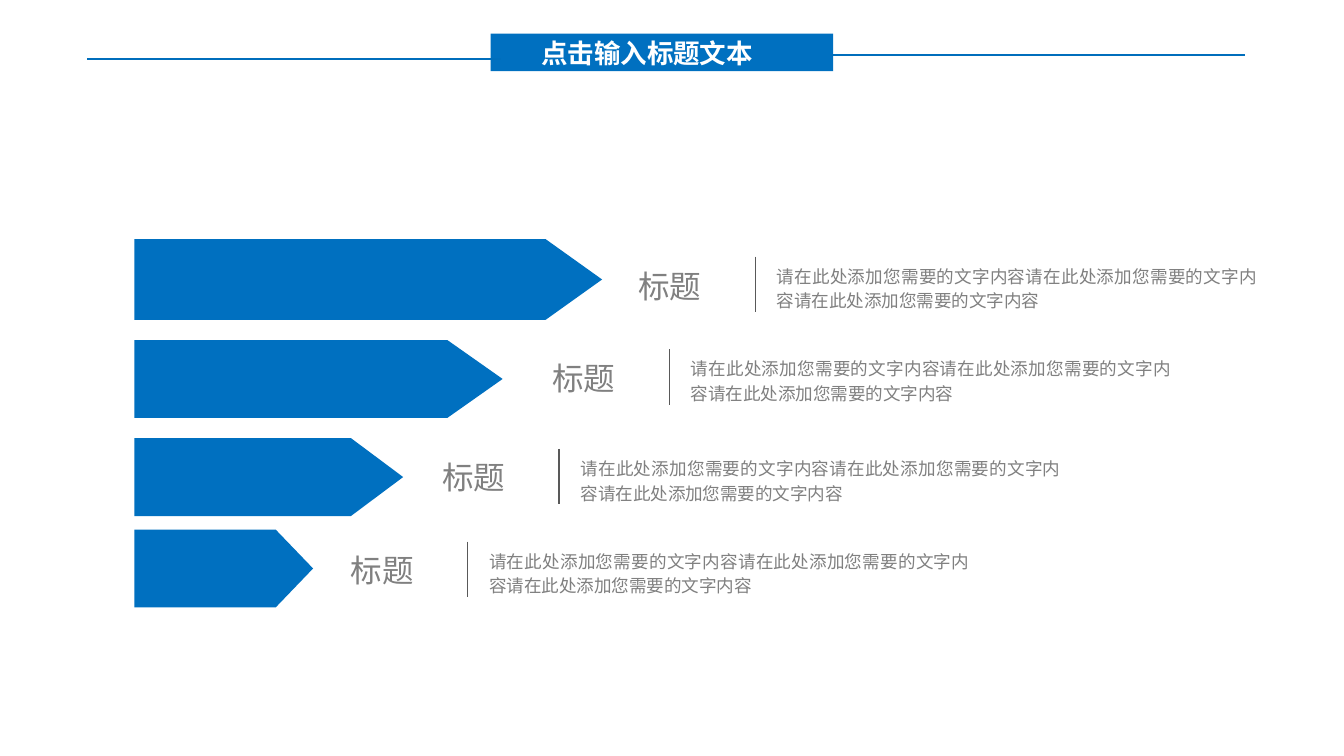
import pptx
import pptx.util
import pptx.dml.color
import pptx.enum.shapes
import pptx.enum.text
import pptx.oxml.ns
import lxml.etree

Inches, Pt = pptx.util.Inches, pptx.util.Pt
KIND = pptx.enum.shapes.MSO_SHAPE
ALIGN = pptx.enum.text.PP_ALIGN

# Content
TITLE = "点击输入标题文本"
HEAD = "标题"
BODY = "请在此处添加您需要的文字内容" * 3
# Arrow: top, width, height, point; rule: left, top; heading top
ROWS = [
    ((1.78, 3.48, 0.60, 0.70), (5.62, 1.91), 1.94),
    ((2.53, 2.74, 0.58, 0.71), (4.98, 2.60), 2.62),
    ((3.26, 2.00, 0.58, 0.67), (4.16, 3.34), 3.36),
    ((3.94, 1.33, 0.58, 0.48), (3.48, 4.03), 4.05),
]
# Title rules: left, top
RULES = [(0.65, 0.44), (6.18, 0.41)]

THEME = {
    "blue": "0070C0", "rule": "006EBC", "bar": "595959",
    "gray": "808080", "white": "FFFFFF",
    "cjk": "Noto Sans CJK SC", "latin": "Calibri",
    "title": 14.2, "head": 16.9, "body": 9.4, "lead": 13.2, "line": 0.75,
}


def tint(name):
    return pptx.dml.color.RGBColor.from_string(THEME[name])


def add_block(slide, kind, left, top, width, height):
    block = slide.shapes.add_shape(
        kind, Inches(left), Inches(top), Inches(width), Inches(height))
    block.shadow.inherit = False
    block.fill.solid()
    block.fill.fore_color.rgb = tint("blue")
    block.line.fill.background()
    return block


def add_line(slide, left, top, width, height, color):
    line = slide.shapes.add_connector(
        pptx.enum.shapes.MSO_CONNECTOR.STRAIGHT, Inches(left), Inches(top),
        Inches(left + width), Inches(top + height))
    line.line.color.rgb = tint(color)
    line.line.width = Pt(THEME["line"])
    lxml.etree.SubElement(line._element.spPr, pptx.oxml.ns.qn("a:effectLst"))


def add_text(slide, words, box, size, font, color, align, bold=False):
    frame = slide.shapes.add_textbox(*map(Inches, box)).text_frame
    frame.word_wrap = True
    frame.auto_size = pptx.enum.text.MSO_AUTO_SIZE.SHAPE_TO_FIT_TEXT
    frame.text = words
    para = frame.paragraphs[0]
    para.alignment = align
    face = para.runs[0].font
    face.size, face.name, face.bold = Pt(THEME[size]), THEME[font], bold
    face.color.rgb = tint(color)
    return frame


# A 16:9 slide
deck = pptx.Presentation()
deck.slide_width = Inches(10)
deck.slide_height = deck.slide_width * 9 // 16
slide = deck.slides.add_slide(deck.slide_layouts[6])

# Rows: arrow, heading, bar and body text
for (top, width, height, point), (left, high), head in ROWS:
    arrow = add_block(slide, KIND.PENTAGON, 1, top, width, height)
    arrow.adjustments[0] = point
    add_line(slide, left, high, 0, 0.41, "bar")
    add_text(slide, HEAD, (left - 1.15, head, 1.03, 0.39),
             "head", "cjk", "gray", ALIGN.CENTER)
    body = add_text(slide, BODY, (left + 0.16, high + 0.04, 3.57, 0.36),
                    "body", "latin", "gray", ALIGN.JUSTIFY)
    body.margin_left = body.margin_right = 0
    body.margin_top = body.margin_bottom = 0
    body.paragraphs[0].line_spacing = Pt(THEME["lead"])

# Title banner with a rule on each side
add_block(slide, KIND.RECTANGLE, 3.65, 0.25, 2.55, 0.28)
add_text(slide, TITLE, (3.93, 0.23, 1.86, 0.34),
         "title", "cjk", "white", ALIGN.LEFT, True)
for left, top in RULES:
    add_line(slide, left, top, 3.08, 0, "rule")

deck.save("out.pptx")
